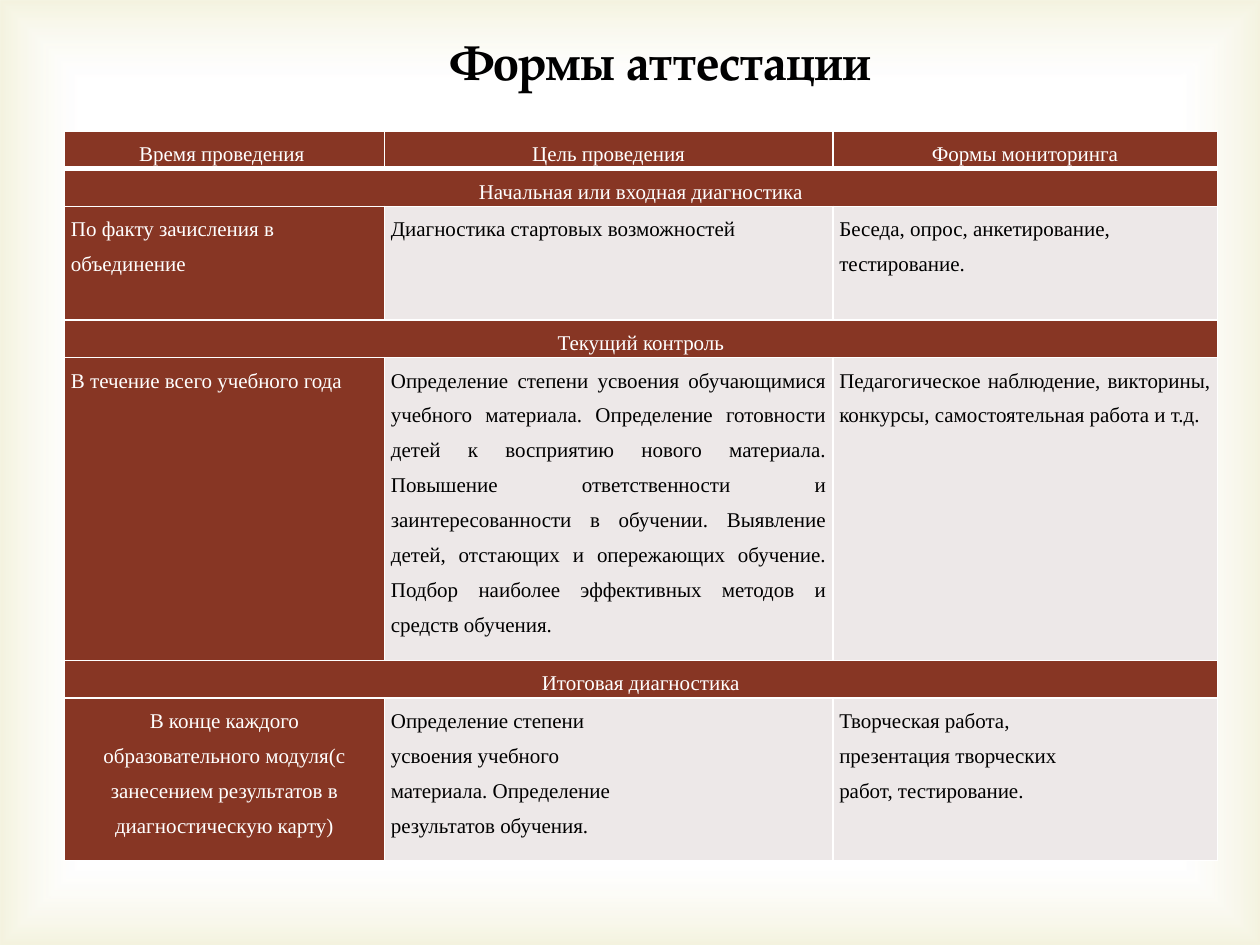
from lxml import etree
from pptx import Presentation
from pptx.dml.color import RGBColor
from pptx.enum.shapes import MSO_SHAPE
from pptx.enum.text import MSO_ANCHOR, PP_ALIGN
from pptx.oxml import parse_xml
from pptx.oxml.ns import nsdecls, qn
from pptx.util import Cm, Pt

LEFT, CENTER, JUSTIFY = PP_ALIGN.LEFT, PP_ALIGN.CENTER, PP_ALIGN.JUSTIFY
MIDDLE = MSO_ANCHOR.MIDDLE
RECTANGLE = MSO_SHAPE.RECTANGLE

COLORS = {"white": "FFFFFF", "black": "000000", "olive": "D1CA75",
          "brown": "873624", "pale": "EDE8E8"}
TITLE_FONT = "TeX Gyre Pagella"
TABLE_FONT = "Times New Roman"

COLUMN_WIDTHS = [6.45, 9.04, 7.75]
BAND_HEIGHT = 0.76
HEADINGS = ["Время проведения ", "Цель проведения", "Формы мониторинга"]
# Each stage: band title, row height, alignments, cell texts
STAGES = [
    ("Начальная или входная диагностика", 2.29, (LEFT, LEFT, LEFT),
     ("По факту зачисления в объединение",
      "Диагностика стартовых возможностей",
      "Беседа, опрос, анкетирование, тестирование.")),
    ("Текущий контроль", 6.1, (JUSTIFY, JUSTIFY, JUSTIFY),
     ("В течение всего учебного года",
      "Определение степени усвоения обучающимися учебного материала. "
      "Определение готовности детей к восприятию нового материала. "
      "Повышение ответственности и заинтересованности в обучении. "
      "Выявление детей, отстающих и опережающих обучение. "
      "Подбор наиболее эффективных методов и средств обучения.",
      "Педагогическое наблюдение, викторины, конкурсы, "
      "самостоятельная работа и т.д.")),
    ("Итоговая диагностика", 3.28, (CENTER, JUSTIFY, JUSTIFY),
     ("В конце каждого образовательного модуля(с занесением результатов "
      "в диагностическую карту)",
      "Определение степени\nусвоения учебного\nматериала. Определение\n"
      "результатов обучения.",
      "Творческая работа,\nпрезентация творческих\nработ, тестирование.")),
]


def write_text(frame, text, font=TABLE_FONT, size=12, color="black",
               bold=False, align=LEFT, spacing=None, indent=0):
    """Write each line of the text as a formatted paragraph."""
    for index, line in enumerate(text.split("\n")):
        para = frame.add_paragraph() if index else frame.paragraphs[0]
        para.alignment = align
        if spacing:
            para.line_spacing = spacing
        if indent:
            para._p.get_or_add_pPr().set("indent", str(Cm(indent)))
        span = para.add_run()
        span.text = line
        span.font.name = font
        span.font.size = Pt(size)
        span.font.bold = bold
        span.font.color.rgb = RGBColor.from_string(COLORS[color])


def add_glow(page, left, top, width, height):
    """Soft olive edge that fades towards the centre."""
    box = page.shapes.add_shape(RECTANGLE, left, top, width, height)
    box.shadow.inherit = False
    box.line.fill.background()
    stops = "".join(
        f'<a:gs pos="{place * 1000}"><a:srgbClr val="{COLORS[color]}">'
        f'<a:alpha val="{alpha * 1000}"/></a:srgbClr></a:gs>'
        for place, color, alpha in [(83, "white", 11), (100, "olive", 23)])
    gradient = parse_xml(
        f'<a:gradFill {nsdecls("a")} rotWithShape="1"><a:gsLst>{stops}</a:gsLst>'
        '<a:path path="rect"><a:fillToRect l="50000" t="50000" r="50000" '
        'b="50000"/></a:path></a:gradFill>')
    box._element.spPr.find(qn("a:prstGeom")).addnext(gradient)


def add_title(page, left, top, width, height):
    box = page.shapes.add_textbox(left, top, width, height)
    frame = box.text_frame
    frame.word_wrap = True
    frame.vertical_anchor = MIDDLE
    write_text(frame, "Формы аттестации", font=TITLE_FONT, size=28,
               bold=True, align=CENTER, indent=1.25)


def style_cell(cell, fill, bottom=1):
    """Set insets, white borders and fill of a cell."""
    cell.margin_left = cell.margin_right = Cm(0.13)
    cell.margin_top = cell.margin_bottom = 0
    properties = cell._tc.get_or_add_tcPr()
    for side, points in zip("LRTB", (1, 1, 1, bottom)):
        line = etree.SubElement(properties, qn(f"a:ln{side}"), w=str(Pt(points)))
        solid = etree.SubElement(line, qn("a:solidFill"))
        etree.SubElement(solid, qn("a:srgbClr"), val=COLORS["white"])
    cell.fill.solid()
    cell.fill.fore_color.rgb = RGBColor.from_string(COLORS[fill])


def add_stages_table(page, left, top, width, height):
    row_heights = [BAND_HEIGHT]
    for stage in STAGES:
        row_heights += [BAND_HEIGHT, stage[1]]
    table = page.shapes.add_table(len(row_heights), len(COLUMN_WIDTHS),
                                  left, top, width, height).table
    table.first_row = table.horz_banding = False
    for column, size in zip(table.columns, COLUMN_WIDTHS):
        column.width = Cm(size)
    for row, size in zip(table.rows, row_heights):
        row.height = Cm(size)

    # Headings
    for index, heading in enumerate(HEADINGS):
        cell = table.cell(0, index)
        style_cell(cell, "brown", bottom=3)
        write_text(cell.text_frame, heading, color="white", align=CENTER,
                   spacing=1.5)

    # A merged band and a row of details for each stage
    for number, (name, _, aligns, texts) in enumerate(STAGES):
        band = 1 + 2 * number
        for index, (text, align) in enumerate(zip(texts, aligns)):
            style_cell(table.cell(band, index), "brown")
            cell = table.cell(band + 1, index)
            style_cell(cell, "pale" if index else "brown")
            write_text(cell.text_frame, text, align=align, spacing=1.5,
                       color="black" if index else "white")
        first = table.cell(band, 0)
        first.merge(table.cell(band, len(COLUMN_WIDTHS) - 1))
        write_text(first.text_frame, name, color="white", align=CENTER,
                   spacing=1.5)


def main():
    deck = Presentation()
    deck.slide_width, deck.slide_height = Cm(25.4), Cm(19.05)
    page = deck.slides.add_slide(deck.slide_layouts[6])
    add_glow(page, 0, 0, deck.slide_width, deck.slide_height)
    add_stages_table(page, Cm(1.3), Cm(2.64), Cm(23.24), Cm(14.71))
    add_title(page, Cm(4.5), Cm(0.51), Cm(16.4), Cm(1.45))
    deck.save("out.pptx")


if __name__ == "__main__":
    main()
